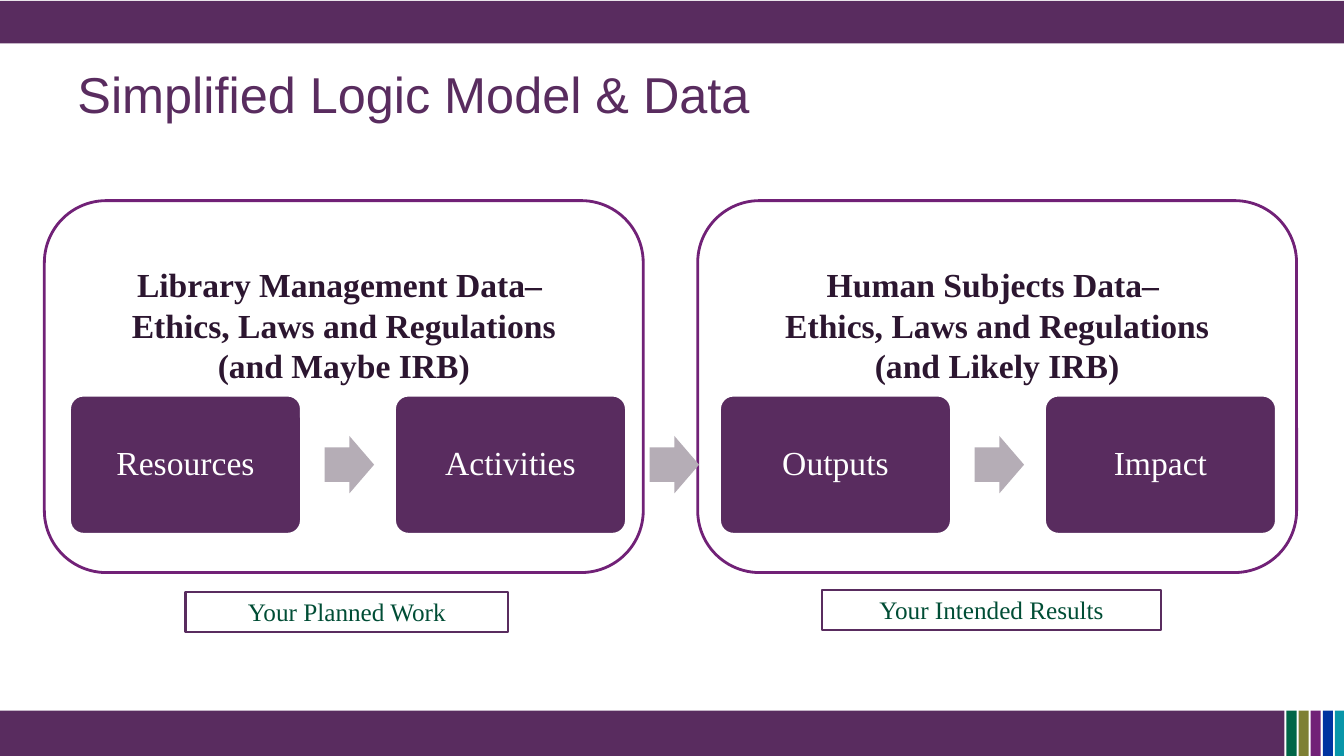
from dataclasses import dataclass

from pptx import Presentation
from pptx.dml.color import RGBColor
from pptx.enum.shapes import MSO_SHAPE as SHAPE
from pptx.enum.text import MSO_ANCHOR as ANCHOR, PP_ALIGN as ALIGN
from pptx.util import Inches, Pt


@dataclass(frozen=True)
class Theme:
    purple: str = "592C5F"
    outline: str = "712177"
    dark: str = "2C1630"
    green: str = "004D35"
    arrow: str = "B5ADB6"
    white: str = "FFFFFF"
    stripes: tuple = ("006647", "7E8034", "712177", "0033A0", "0996A9")
    heading_font: str = "Arial"
    body_font: str = "Times New Roman"
    title_size: int = 36
    body_size: int = 24
    label_size: int = 18


THEME = Theme()


def add_box(slide, kind, box, fill=None, line=None, line_width=1.5):
    sp = slide.shapes.add_shape(kind, *map(Inches, box))
    sp.shadow.inherit = False
    if fill:
        sp.fill.solid()
        sp.fill.fore_color.rgb = RGBColor.from_string(fill)
    else:
        sp.fill.background()
    if line:
        sp.line.color.rgb = RGBColor.from_string(line)
        sp.line.width = Pt(line_width)
    else:
        sp.line.fill.background()
    return sp


def write(sp, lines, size, color, font=THEME.body_font, bold=False,
          align=ALIGN.CENTER, anchor=ANCHOR.MIDDLE):
    tf = sp.text_frame
    tf.word_wrap = True
    tf.vertical_anchor = anchor
    tf.text = "\n".join(lines)
    for p in tf.paragraphs:
        p.alignment = align
        for r in p.runs:
            r.font.name = font
            r.font.size = Pt(size)
            r.font.bold = bold
            r.font.color.rgb = RGBColor.from_string(color)


def add_bands(slide, width):
    """Draw the top band and the bottom band with its coloured stripes."""
    stripe_left, pitch = 12.76, 0.12
    add_box(slide, SHAPE.RECTANGLE, (0, 7.05, 12.74, 0.45), THEME.purple)
    for i, color in enumerate(THEME.stripes):
        add_box(slide, SHAPE.RECTANGLE,
                (stripe_left + i * pitch, 7.05, 0.1, 0.45), color)
    add_box(slide, SHAPE.RECTANGLE, (0, 0.01, width, 0.42), THEME.purple)


def add_title(slide, box, text):
    sp = slide.shapes.add_textbox(*map(Inches, box))
    write(sp, [text], THEME.title_size, THEME.purple, THEME.heading_font,
          align=ALIGN.LEFT)


def add_panel(slide, box, lines):
    sp = add_box(slide, SHAPE.ROUNDED_RECTANGLE, box, line=THEME.outline,
                 line_width=2)
    sp.text_frame.margin_top = Inches(0.45)
    write(sp, lines, THEME.body_size, THEME.dark, bold=True,
          anchor=ANCHOR.TOP)


def add_flow(slide, box, steps):
    """Spread the steps evenly over the box, with an arrow after each but the last."""
    left, top, width, height = box
    step_w, arrow_w, arrow_h = 2.3, 0.49, 0.57
    pitch = (width - step_w) / (len(steps) - 1)
    for i, step in enumerate(steps):
        x = left + i * pitch
        sp = add_box(slide, SHAPE.ROUNDED_RECTANGLE, (x, top, step_w, height),
                     THEME.purple, THEME.white, 2)
        sp.adjustments[0] = 0.1
        write(sp, [step], THEME.body_size, THEME.white)
        sp.text_frame.paragraphs[0].line_spacing = 0.9
        if i < len(steps) - 1:
            arrow = add_box(slide, SHAPE.RIGHT_ARROW,
                            (x + step_w + 0.23, top + (height - arrow_h) / 2,
                             arrow_w, arrow_h), THEME.arrow)
            arrow.adjustments[0] = 0.6


def add_label(slide, box, text):
    sp = add_box(slide, SHAPE.RECTANGLE, box, THEME.white, THEME.purple)
    write(sp, [text], THEME.label_size, THEME.green)


def main():
    prs = Presentation()
    prs.slide_width, prs.slide_height = Inches(13.33), Inches(7.5)
    s = prs.slides.add_slide(prs.slide_layouts[6])
    add_bands(s, 13.33)
    add_title(s, (0.67, 0.3, 12, 1.25), "Simplified Logic Model & Data")
    regulations = "Ethics, Laws and Regulations"
    add_panel(s, (0.44, 1.99, 5.94, 3.69),
              ["Library Management Data– ", regulations, "(and Maybe IRB)"])
    add_panel(s, (6.92, 1.99, 5.94, 3.69),
              ["Human Subjects Data– ", regulations, "(and Likely IRB)"])
    add_flow(s, (0.69, 3.92, 11.97, 1.38),
             ["Resources", "Activities", "Outputs", "Impact"])
    add_label(s, (1.84, 5.87, 3.2, 0.4), "Your Planned Work")
    add_label(s, (8.15, 5.85, 3.37, 0.4), "Your Intended Results")
    prs.save("out.pptx")


if __name__ == "__main__":
    main()
